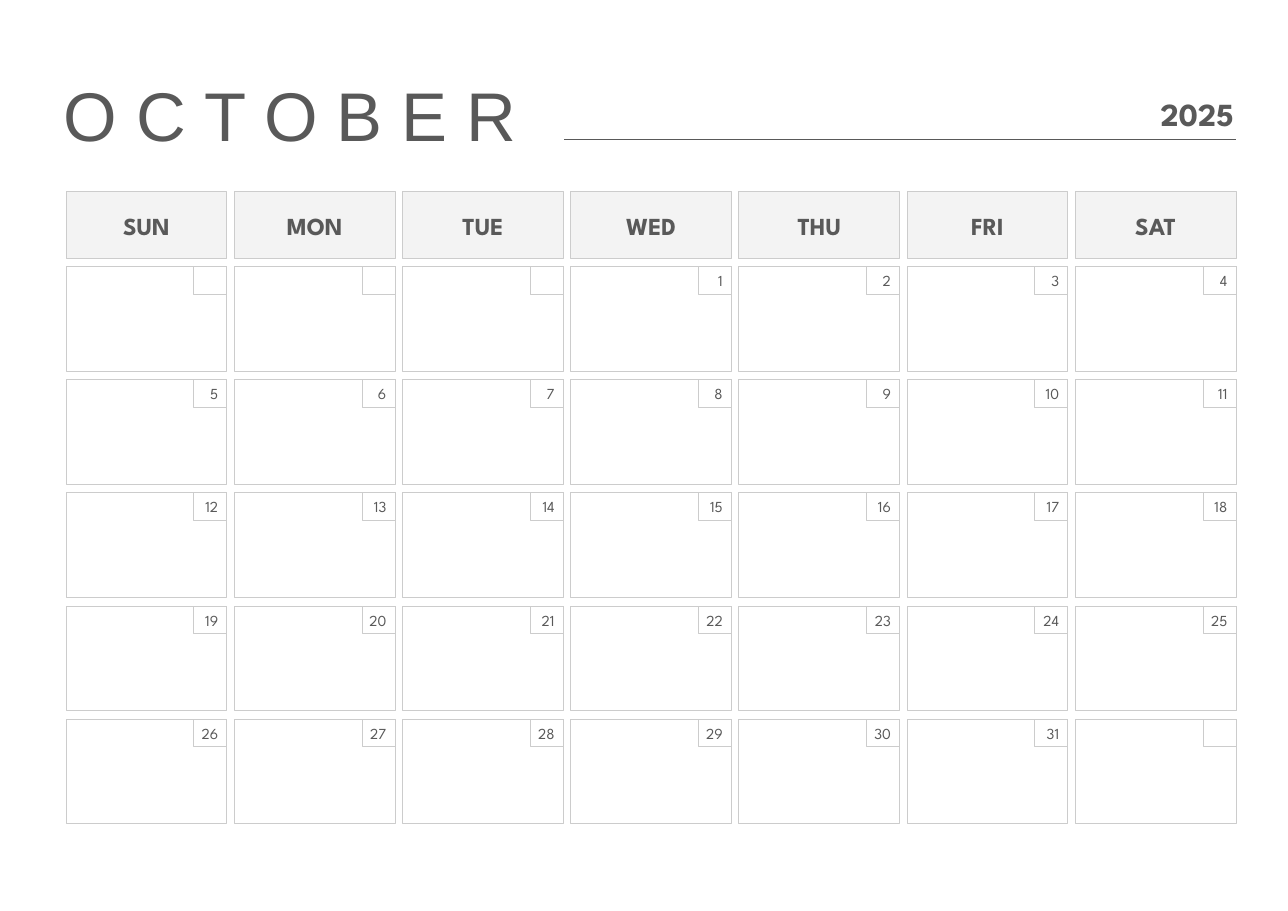
import pptx
import pptx.dml.color
import pptx.enum.shapes
import pptx.enum.text
import pptx.oxml.ns
import pptx.util
from lxml import etree

Inches = pptx.util.Inches
Shape = pptx.enum.shapes.MSO_SHAPE
Align = pptx.enum.text.PP_ALIGN
Anchor = pptx.enum.text.MSO_ANCHOR
AutoSize = pptx.enum.text.MSO_AUTO_SIZE


def color(hex_value):
    return pptx.dml.color.RGBColor.from_string(hex_value)


class CalendarPage:
    ink = "595959"
    border = "CCCCCC"
    header_fill = "F3F3F3"
    paper = "FFFFFF"
    title_font = "Arial"
    body_font = "League Spartan"
    line_width = pptx.util.Pt(0.75)

    def __init__(self, slide):
        self.slide = slide
        slide.background.fill.solid()
        slide.background.fill.fore_color.rgb = color(self.paper)

    def group(self):
        return self.slide.shapes.add_group_shape().shapes

    def label(self, shape, text, size, align, font=None, bold=False,
              margins=(0, 0, 0, 0), anchor=Anchor.MIDDLE, grow=False):
        frame = shape.text_frame
        frame.word_wrap = True
        frame.vertical_anchor = anchor
        frame.auto_size = AutoSize.SHAPE_TO_FIT_TEXT if grow else AutoSize.NONE
        (frame.margin_left, frame.margin_top,
         frame.margin_right, frame.margin_bottom) = map(Inches, margins)
        paragraph = frame.paragraphs[0]
        paragraph.text = text
        paragraph.alignment = align
        paragraph.font.name = font or self.body_font
        paragraph.font.size = pptx.util.Pt(size)
        paragraph.font.bold = bold
        paragraph.font.color.rgb = color(self.ink)

    def title(self, text, box):
        title = self.slide.shapes.add_textbox(*map(Inches, box))
        self.label(title, text, 45, Align.LEFT, self.title_font,
                   anchor=Anchor.TOP, grow=True)

    def box(self, shapes, box, fill=None, border=None, kind=Shape.RECTANGLE):
        shape = shapes.add_shape(kind, *map(Inches, box))
        shape.shadow.inherit = False
        if fill:
            shape.fill.solid()
            shape.fill.fore_color.rgb = color(fill)
        else:
            shape.fill.background()
        if border:
            shape.line.color.rgb = color(border)
            shape.line.width = self.line_width
        else:
            shape.line.fill.background()
        return shape

    def year(self, text, box):
        year = self.box(self.slide.shapes, box, kind=Shape.ROUNDED_RECTANGLE)
        self.label(year, text, 21, Align.RIGHT, bold=True)

    def weekday(self, shapes, text, box):
        header = self.box(shapes, box, self.header_fill, self.border)
        self.label(header, text, 16, Align.CENTER, bold=True, margins=(0.1,) * 4)

    def day_cell(self, shapes, box):
        self.box(shapes, box, self.paper, self.border)

    def date_tag(self, shapes, text, box):
        tag = self.box(shapes, box, border=self.border)
        if text:
            self.label(tag, text, 10, Align.RIGHT,
                       margins=(0, 0.04, 0.08, 0.04), grow=True)

    def rule(self, left, right, top):
        rule = self.slide.shapes.add_connector(
            pptx.enum.shapes.MSO_CONNECTOR.STRAIGHT,
            *map(Inches, (left, top, right, top)))
        rule.line.color.rgb = color(self.ink)
        rule.line.width = self.line_width
        properties = rule._element.spPr
        etree.SubElement(properties, pptx.oxml.ns.qn("a:effectLst"))


WEEKDAYS = ["SUN", "MON", "TUE", "WED", "THU", "FRI", "SAT"]
FIRST_WEEKDAY = WEEKDAYS.index("WED")
DAYS = 31
WEEKS = 5
CELL_WIDTH, CELL_HEIGHT = 1.46, 0.95
TAG_WIDTH, TAG_HEIGHT = 0.3, 0.25
COLUMNS = [0.6 + column * (9.76 - 0.6) / 6 for column in range(len(WEEKDAYS))]
ROWS = [2.42 + week * (6.53 - 2.42) / 4 for week in range(WEEKS)]


def main():
    presentation = pptx.Presentation()
    presentation.slide_width = Inches(11.69)
    presentation.slide_height = Inches(8.27)
    page = CalendarPage(
        presentation.slides.add_slide(presentation.slide_layouts[6]))

    page.title("O C T O B E R", (0.58, 0.66, 4.63, 0.76))
    page.year("2025", (10, 0.79, 1.22, 0.48))

    grid = page.group()
    for weekday, left in zip(WEEKDAYS, COLUMNS):
        page.weekday(grid, weekday, (left, 1.74, CELL_WIDTH, 0.61))
    for top in ROWS:
        for left in COLUMNS:
            page.day_cell(grid, (left, top, CELL_WIDTH, CELL_HEIGHT))

    dates = page.group()
    for week, top in enumerate(ROWS):
        for column, left in enumerate(COLUMNS):
            day = week * len(WEEKDAYS) + column - FIRST_WEEKDAY + 1
            text = str(day) if 1 <= day <= DAYS else ""
            tag_left = left + CELL_WIDTH - TAG_WIDTH
            page.date_tag(dates, text, (tag_left, top, TAG_WIDTH, TAG_HEIGHT))

    page.rule(5.12, 11.22, 1.27)
    presentation.save("out.pptx")


if __name__ == "__main__":
    main()
